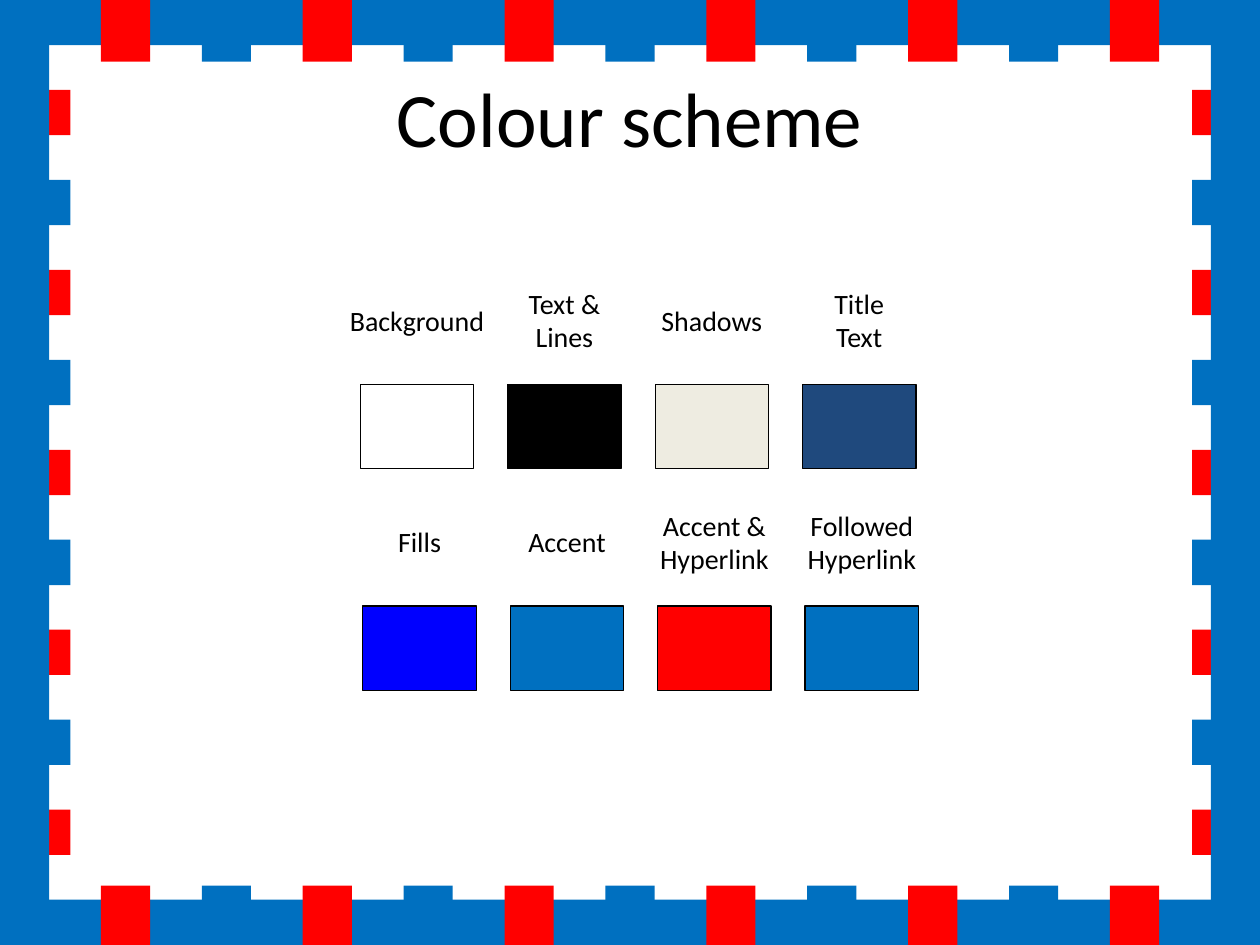
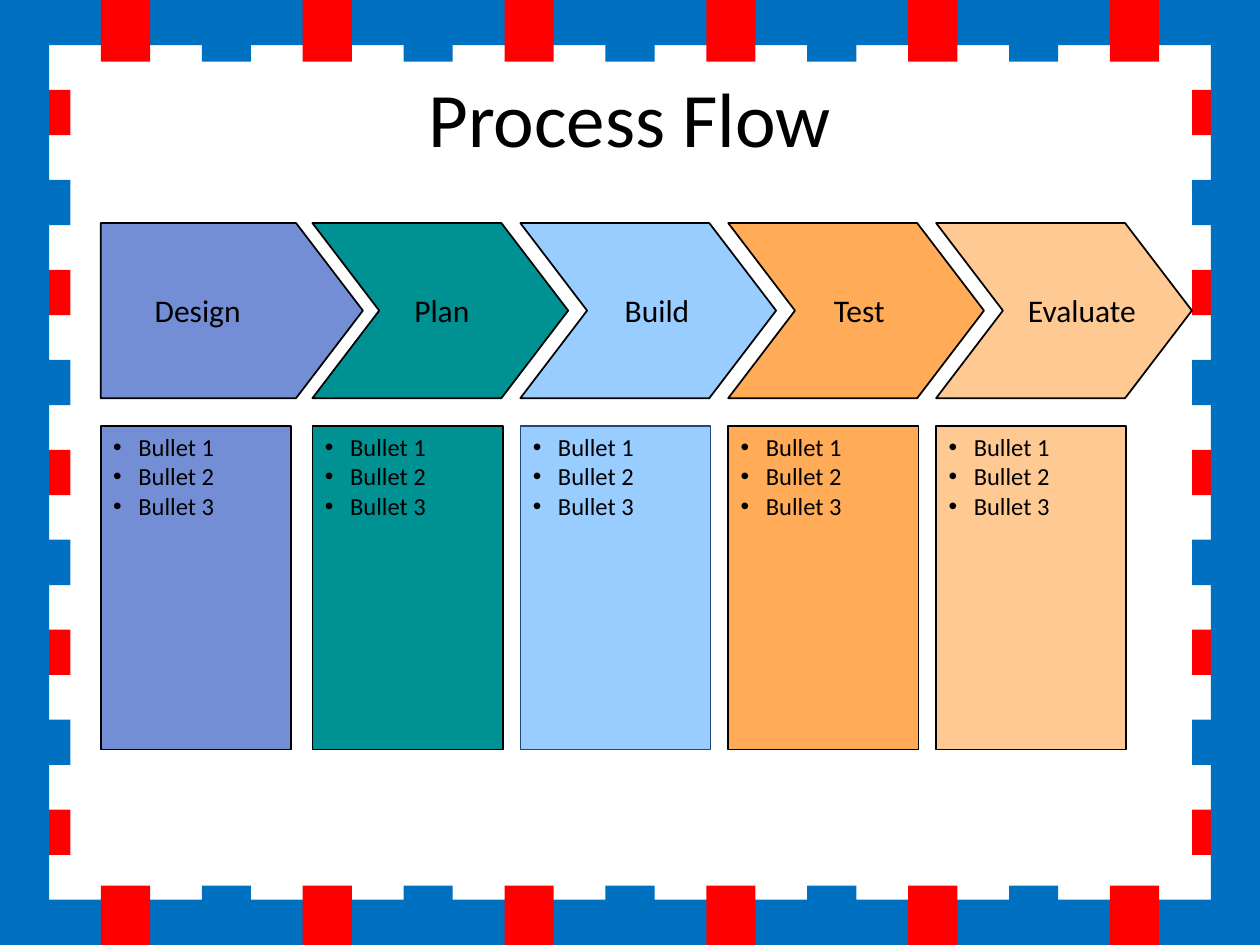
from lxml import etree
from pptx import Presentation
from pptx.dml.color import RGBColor
from pptx.enum.shapes import MSO_SHAPE
from pptx.enum.text import MSO_ANCHOR, PP_ALIGN
from pptx.oxml.ns import qn
from pptx.util import Inches, Pt

RECTANGLE = MSO_SHAPE.RECTANGLE
PENTAGON = MSO_SHAPE.PENTAGON
CHEVRON = MSO_SHAPE.CHEVRON
LEFT, CENTER = PP_ALIGN.LEFT, PP_ALIGN.CENTER
TOP, MIDDLE = MSO_ANCHOR.TOP, MSO_ANCHOR.MIDDLE

PAGE_WIDTH, PAGE_HEIGHT = 10, 7.5
FONT = "Calibri"
BLACK, WHITE, NAVY = "000000", "FFFFFF", "1F497D"
BLUE, RED = "0070C0", "FF0000"
STRIPE_COLOURS = (BLUE, RED)

ROW_COUNT, ROW_HEIGHT = 11, 0.36
COLUMN_COUNT, COLUMN_WIDTH = 13, 0.39

SWATCH_WIDTH, SWATCH_HEIGHT, SWATCH_STEP = 0.9, 0.67, 1.17
LABEL_WIDTH, LABEL_HEIGHT, LABEL_RISE = 1.4, 0.64, 0.83
# Each row: left, top, (label lines, fill)
SWATCH_ROWS = [
    (2.86, 3.05, [
        (["Background"], WHITE),
        (["Text &", "Lines"], BLACK),
        (["Shadows"], "EEECE1"),
        (["Title", "Text"], NAVY),
    ]),
    (2.88, 4.81, [
        (["Fills"], "0000FF"),
        (["Accent"], BLUE),
        (["Accent &", "Hyperlink"], RED),
        (["Followed", "Hyperlink"], BLUE),
    ]),
]

ARROW_TOP, ARROW_HEIGHT, ARROW_TIP = 1.77, 1.39, 0.53
CARD_TOP, CARD_WIDTH, CARD_HEIGHT = 3.38, 1.51, 2.57
BULLETS = ["Bullet 1", "Bullet 2", "Bullet 3"]
# Name, left, name left, fill, card outline, arrow shape, arrow width
STAGES = [
    ("Design", 0.8, 1.13, "748ED6", BLACK, PENTAGON, 2.08),
    ("Plan", 2.48, 3.19, "009193", BLACK, CHEVRON, 2.03),
    ("Build", 4.13, 4.86, "99CCFF", NAVY, CHEVRON, 2.03),
    ("Test", 5.78, 6.52, "FFAB57", BLACK, CHEVRON, 2.03),
    ("Evaluate", 7.43, 8.06, "FFC993", BLACK, CHEVRON, 2.03),
]


def colour(hex_value):
    return RGBColor.from_string(hex_value)


def add_figure(page, kind, left, top, width, height, fill, line=None, weight=1):
    """Add a filled preset shape, outlined only when a line colour is given."""
    figure = page.shapes.add_shape(
        kind, Inches(left), Inches(top), Inches(width), Inches(height))
    figure.shadow.inherit = False
    figure.fill.solid()
    figure.fill.fore_color.rgb = colour(fill)
    if line:
        figure.line.color.rgb = colour(line)
        figure.line.width = Pt(weight)
    else:
        figure.line.fill.background()
    return figure


def add_bullet(para):
    properties = para._p.get_or_add_pPr()
    for name, value in {"marL": Inches(0.2), "indent": Inches(-0.2)}.items():
        properties.set(name, str(value))
    etree.SubElement(properties, qn("a:buFont"), typeface="Arial")
    etree.SubElement(properties, qn("a:buChar"), char="•")


def write_lines(box, lines, size, align=LEFT, anchor=TOP, bulleted=False):
    """Fill a shape with one paragraph per line."""
    frame = box.text_frame
    frame.word_wrap = True
    frame.vertical_anchor = anchor
    frame.text = "\n".join(lines)
    font_format = {"name": FONT, "size": Pt(size)}
    for para in frame.paragraphs:
        para.alignment = align
        if bulleted:
            add_bullet(para)
        for span in para.runs:
            span.font.color.rgb = colour(BLACK)
            for name, value in font_format.items():
                setattr(span.font, name, value)


def add_label(page, left, top, width, height, lines, size, **layout):
    box = page.shapes.add_textbox(
        Inches(left), Inches(top), Inches(width), Inches(height))
    write_lines(box, lines, size, **layout)


def add_striped_frame(page):
    """Cover the page with crossing stripes and lay a white panel on top."""
    row_step = (PAGE_HEIGHT - ROW_HEIGHT) / (ROW_COUNT - 1)
    for row in range(ROW_COUNT):
        add_figure(page, RECTANGLE, 0, row * row_step, PAGE_WIDTH, ROW_HEIGHT,
                   STRIPE_COLOURS[row % 2])
    column_step = (PAGE_WIDTH - COLUMN_WIDTH) / (COLUMN_COUNT - 1)
    for column in range(COLUMN_COUNT):
        add_figure(page, RECTANGLE, column * column_step, 0, COLUMN_WIDTH,
                   PAGE_HEIGHT, STRIPE_COLOURS[column % 2])
    add_figure(page, RECTANGLE, 0.56, 0.49, 8.9, 6.54, WHITE)


def add_page(deck, title):
    page = deck.slides.add_slide(deck.slide_layouts[6])
    add_striped_frame(page)
    add_label(page, 0.5, 0.3, 9, 1.25, [title], 44, align=CENTER, anchor=MIDDLE)
    return page


def add_swatch(page, left, top, lines, fill):
    add_figure(page, RECTANGLE, left, top, SWATCH_WIDTH, SWATCH_HEIGHT,
               fill, BLACK, 0.75)
    label_left = left - (LABEL_WIDTH - SWATCH_WIDTH) / 2
    add_label(page, label_left, top - LABEL_RISE, LABEL_WIDTH, LABEL_HEIGHT,
              lines, 16, align=CENTER, anchor=MIDDLE)


def add_stage(page, name, left, name_left, fill, outline, arrow_kind, arrow_width):
    """Add a process arrow with its name and the bullet card below."""
    card = add_figure(page, RECTANGLE, left, CARD_TOP, CARD_WIDTH, CARD_HEIGHT,
                      fill, outline)
    write_lines(card, BULLETS, 14, bulleted=True)
    arrow = add_figure(page, arrow_kind, left, ARROW_TOP, arrow_width,
                       ARROW_HEIGHT, fill, BLACK)
    arrow.adjustments[0] = ARROW_TIP / ARROW_HEIGHT
    add_label(page, name_left, 2.26, 1.2, 0.4, [name], 18)


def main():
    deck = Presentation()
    deck.slide_width = Inches(PAGE_WIDTH)
    deck.slide_height = Inches(PAGE_HEIGHT)

    scheme_page = add_page(deck, "Colour scheme")
    for left, top, swatches in SWATCH_ROWS:
        for index, (lines, fill) in enumerate(swatches):
            add_swatch(scheme_page, left + index * SWATCH_STEP, top, lines, fill)

    process_page = add_page(deck, "Process Flow")
    for stage in STAGES:
        add_stage(process_page, *stage)

    deck.save("out.pptx")


if __name__ == "__main__":
    main()
